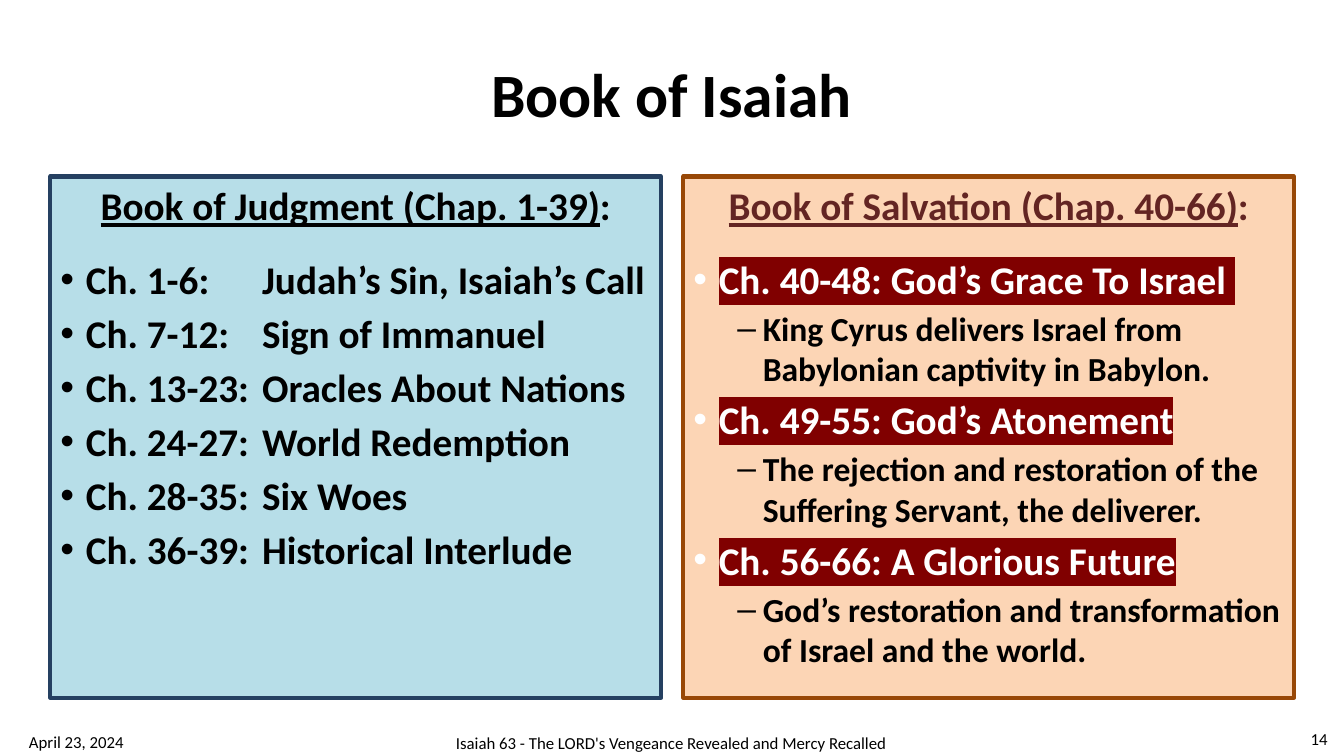
"""Build the Book of Isaiah overview slide."""
from lxml import etree
from pptx import Presentation
from pptx.dml.color import RGBColor
from pptx.enum.text import MSO_ANCHOR, MSO_AUTO_SIZE, PP_ALIGN
from pptx.oxml.ns import qn
from pptx.util import Cm, Pt

LEFT, MID, RIGHT = PP_ALIGN.LEFT, PP_ALIGN.CENTER, PP_ALIGN.RIGHT
CENTER = MSO_ANCHOR.MIDDLE
FIXED = MSO_AUTO_SIZE.NONE

BLACK = RGBColor(0, 0, 0)
WHITE = RGBColor(255, 255, 255)
AQUA = RGBColor(0xB7, 0xDE, 0xE8)
NAVY = RGBColor(0x25, 0x40, 0x61)
PEACH = RGBColor(0xFC, 0xD5, 0xB5)
BROWN = RGBColor(0x98, 0x48, 0x07)
WINE = RGBColor(0x63, 0x25, 0x23)
MAROON = RGBColor(0x80, 0, 0)

HEAD = {"size": Pt(28), "bold": True, "underline": True}
ITEM = {"size": Pt(28), "bold": True, "color": BLACK}
MARK = {**ITEM, "color": WHITE}
SUB = {**ITEM, "size": Pt(24)}
FOOT = {"size": Pt(12), "color": BLACK}

JUDGE = [
    ("Ch. 1-6:", "Judah’s Sin, Isaiah’s Call"),
    ("Ch. 7-12:", "Sign of Immanuel"),
    ("Ch. 13-23:", "Oracles About Nations"),
    ("Ch. 24-27:", "World Redemption"),
    ("Ch. 28-35:", "Six Woes"),
    ("Ch. 36-39:", "Historical Interlude"),
]
SAVE = [
    ("Ch. 40-48: God’s Grace To Israel ",
     "King Cyrus delivers Israel from Babylonian captivity in Babylon."),
    ("Ch. 49-55: God’s Atonement",
     "The rejection and restoration of the Suffering Servant, the deliverer."),
    ("Ch. 56-66: A Glorious Future",
     "God’s restoration and transformation of Israel and the world."),
]
NOTES = [
    ("April 23, 2024", (0.48, 18.19, 5.82, 1.02), LEFT),
    ("Isaiah 63 - The LORD's Vengeance Revealed and Mercy Recalled",
     (5.21, 18.21, 23.42, 1.02), MID),
    ("14", (31.17, 18.11, 2.54, 1.02), RIGHT),
]


def put(shape, spot):
    names = ("left", "top", "width", "height")
    for name, val in zip(names, spot):
        setattr(shape, name, Cm(val))


def add_run(para, text, form, glow=None):
    run = para.add_run()
    run.text = text
    run.font.name = "Calibri"
    for name, val in form.items():
        if name == "color":
            run.font.color.rgb = val
        else:
            setattr(run.font, name, val)
    if glow is not None:
        light = etree.Element(qn("a:highlight"))
        etree.SubElement(light, qn("a:srgbClr"), val=str(glow))
        run.font._element.find(qn("a:solidFill")).addnext(light)


def add_item(frame, text, form, sign="•", level=0, glow=None):
    para = frame.add_paragraph()
    para.level = level
    props = para._p.get_or_add_pPr()
    props.set("marL", str(Cm(1.75 if level else 0.64)))
    props.set("indent", str(Cm(-0.64)))
    etree.SubElement(props, qn("a:buChar"), char=sign)
    if "\t" in text:
        tabs = etree.SubElement(props, qn("a:tabLst"))
        etree.SubElement(tabs, qn("a:tab"), pos=str(Cm(5.08)), algn="l")
    para.space_before = Pt(4 if level else 5)
    add_run(para, text, form, glow)


def add_panel(shape, left, fill, edge, head, ink):
    put(shape, (left, 4.45, 15.39, 13.13))
    shape.fill.solid()
    shape.fill.fore_color.rgb = fill
    shape.line.color.rgb = edge
    shape.line.width = Pt(3)
    frame = shape.text_frame
    frame.auto_size = FIXED
    para = frame.paragraphs[0]
    props = para._p.get_or_add_pPr()
    props.set("marL", "0")
    props.set("indent", "0")
    etree.SubElement(props, qn("a:buNone"))
    para.alignment = MID
    para.space_before = Pt(0)
    para.space_after = Pt(14)
    form = {**HEAD, "color": ink}
    add_run(para, head, form)
    add_run(para, ":", {**form, "underline": False})
    return frame


def add_note(slide, text, spot, align):
    box = slide.shapes.add_textbox(*map(Cm, spot))
    frame = box.text_frame
    frame.word_wrap = True
    frame.vertical_anchor = CENTER
    para = frame.paragraphs[0]
    para.alignment = align
    add_run(para, text, FOOT)


def main():
    deck = Presentation()
    deck.slide_width, deck.slide_height = Cm(33.87), Cm(19.05)
    slide = deck.slides.add_slide(deck.slide_layouts[3])
    title, left, right = slide.placeholders

    put(title, (1.69, 0.76, 30.48, 3.18))
    title.text_frame.vertical_anchor = CENTER
    para = title.text_frame.paragraphs[0]
    para.alignment = MID
    add_run(para, "Book of Isaiah", {**ITEM, "size": Pt(44)})

    frame = add_panel(left, 1.27, AQUA, NAVY,
                      "Book of Judgment (Chap. 1-39)", BLACK)
    for part, theme in JUDGE:
        add_item(frame, f"{part}\t{theme}", ITEM)

    frame = add_panel(right, 17.22, PEACH, BROWN,
                      "Book of Salvation (Chap. 40-66)", WINE)
    for part, theme in SAVE:
        add_item(frame, part, MARK, glow=MAROON)
        add_item(frame, theme, SUB, "–", 1)

    for note in NOTES:
        add_note(slide, *note)
    deck.save("out.pptx")


if __name__ == "__main__":
    main()
